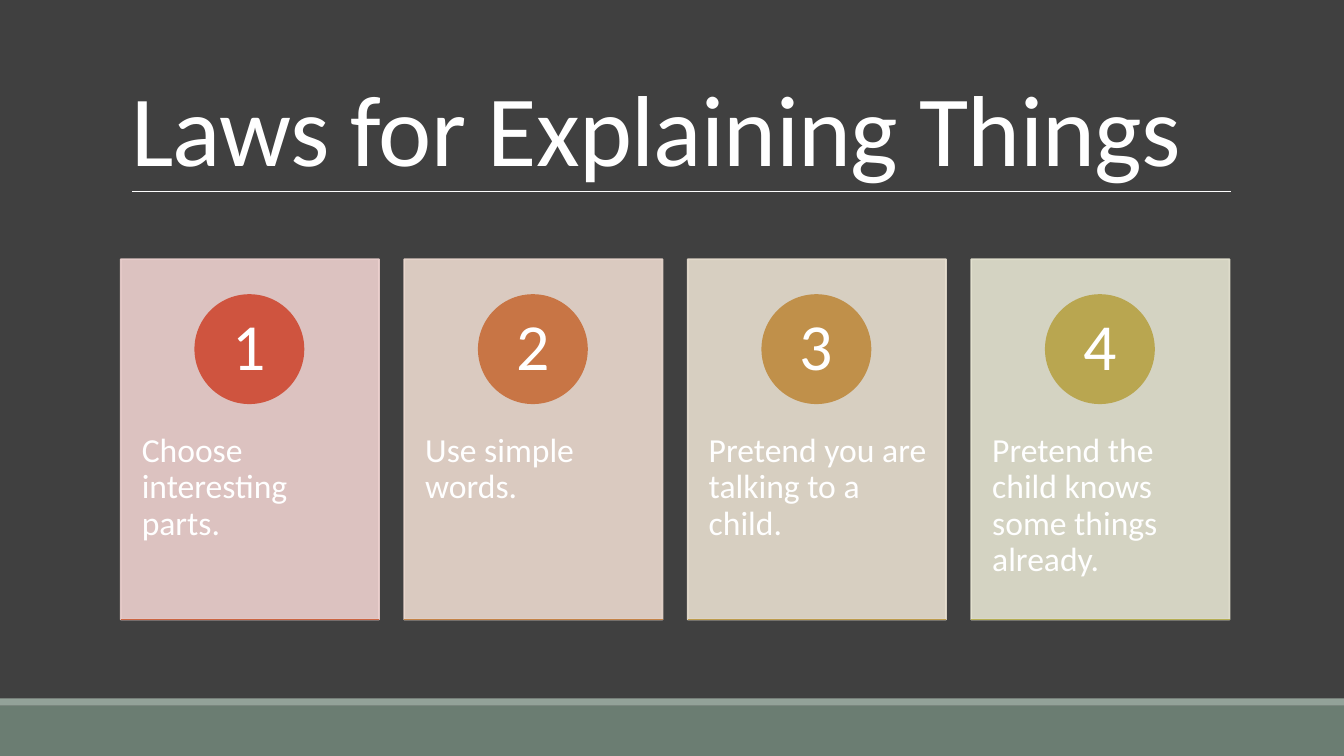
import pptx
import pptx.util
import pptx.dml.color
import pptx.enum.shapes
import pptx.enum.text
import pptx.oxml.ns
import lxml.etree

PX = 9525
FONT = "Calibri"
HUES = {"back": "404040", "foot": "6B7D72", "strip": "93A299", "text": "FFFFFF"}
LAWS = [
    ("Choose interesting parts.", {"card": "EDD1CF", "disc": "CF543F", "base": "CB6542"}),
    ("Use simple words.", {"card": "EBD9CF", "disc": "C87545", "base": "C48347"}),
    ("Pretend you are talking to a child.", {"card": "E8DFD0", "disc": "C0904A", "base": "BD9C4D"}),
    ("Pretend the child knows some things already.", {"card": "E5E3D1", "disc": "B9A650", "base": "B5AE53"}),
]
KIND = pptx.enum.shapes.MSO_SHAPE
ALIGN = pptx.enum.text.PP_ALIGN
ANCHOR = pptx.enum.text.MSO_ANCHOR


def rgb(hue):
    """Turn a hex string into a colour."""
    return pptx.dml.color.RGBColor.from_string(hue)


def draw(slide, kind, box, hue, edge=False, alpha=None):
    """Add a filled shape, with an edge of the same colour if asked."""
    shape = slide.shapes.add_shape(kind, *(n * PX for n in box))
    shape.shadow.inherit = False
    shape.fill.solid()
    shape.fill.fore_color.rgb = rgb(hue)
    if edge:
        shape.line.color.rgb = rgb(hue)
        shape.line.width = pptx.util.Pt(1.25)
    else:
        shape.line.fill.background()
    if alpha:
        for node in shape._element.spPr.iter(pptx.oxml.ns.qn("a:srgbClr")):
            tag = lxml.etree.SubElement(node, pptx.oxml.ns.qn("a:alpha"))
            tag.set("val", str(alpha * 1000))
    return shape


def rule(slide, left, top, wide, hue, size):
    """Add a level line."""
    line = slide.shapes.add_connector(
        pptx.enum.shapes.MSO_CONNECTOR.STRAIGHT,
        left * PX, top * PX, (left + wide) * PX, top * PX)
    line.line.color.rgb = rgb(hue)
    line.line.width = pptx.util.Pt(size)
    lxml.etree.SubElement(line._element.spPr, pptx.oxml.ns.qn("a:effectLst"))


def write(shape, text, size, pads, anchor, align=ALIGN.LEFT, space=0.9):
    """Write one run into a shape and return it."""
    frame = shape.text_frame
    frame.word_wrap = True
    frame.vertical_anchor = anchor
    (frame.margin_left, frame.margin_top,
     frame.margin_right, frame.margin_bottom) = (n * PX for n in pads)
    para = frame.paragraphs[0]
    para.alignment = align
    para.line_spacing = space
    run = para.add_run()
    run.text = text
    run.font.name = FONT
    run.font.size = pptx.util.Pt(size)
    run.font.color.rgb = rgb(HUES["text"])
    return run


def footer(slide, left, top, wide, high):
    """Place the foot band under its thin strip."""
    strip = 7
    draw(slide, KIND.RECTANGLE, (left, top + strip, wide, high - strip), HUES["foot"])
    draw(slide, KIND.RECTANGLE, (left, top, wide, strip), HUES["strip"])


def header(slide, left, top, wide, high):
    """Place the title over its rule."""
    box = slide.shapes.add_textbox(*(n * PX for n in (left, top, wide, high)))
    run = write(box, "Laws for Explaining Things", 72, (10, 5, 10, 5),
                ANCHOR.BOTTOM, space=0.85)
    run.font._element.set("spc", "-50")
    rule(slide, left + 11, top + high - 1, wide - 10, HUES["text"], 0.5)


def card(slide, left, top, wide, high, num, text, hues):
    """Place one law: card, numbered disc and base line."""
    disc = 103
    panel = draw(slide, KIND.RECTANGLE, (left, top, wide, high), hues["card"], True, 90)
    write(panel, text, 24, (20, 166, 17, 35), ANCHOR.TOP)
    badge = draw(slide, KIND.OVAL, (left + (wide - disc) // 2, top + 34, disc, disc),
                 hues["disc"], True)
    write(badge, str(num), 47, (8, 1, 8, 1), ANCHOR.MIDDLE, ALIGN.CENTER)
    rule(slide, left, top + high, wide, hues["base"], 1.25)


def cards(slide, left, top, wide, high):
    """Place the laws side by side with equal gaps."""
    gap = 24
    each = (wide - gap * (len(LAWS) - 1)) // len(LAWS)
    for i, (text, hues) in enumerate(LAWS):
        card(slide, left + i * (each + gap), top, each, high, i + 1, text, hues)


def main():
    """Build and save the slide."""
    deck = pptx.Presentation()
    deck.slide_width, deck.slide_height = 1280 * PX, 720 * PX
    slide = deck.slides.add_slide(deck.slide_layouts[6])
    slide.background.fill.solid()
    slide.background.fill.fore_color.rgb = rgb(HUES["back"])
    footer(slide, 0, 665, 1280, 55)
    header(slide, 115, 30, 1056, 153)
    cards(slide, 115, 247, 1056, 343)
    deck.save("out.pptx")


if __name__ == "__main__":
    main()
